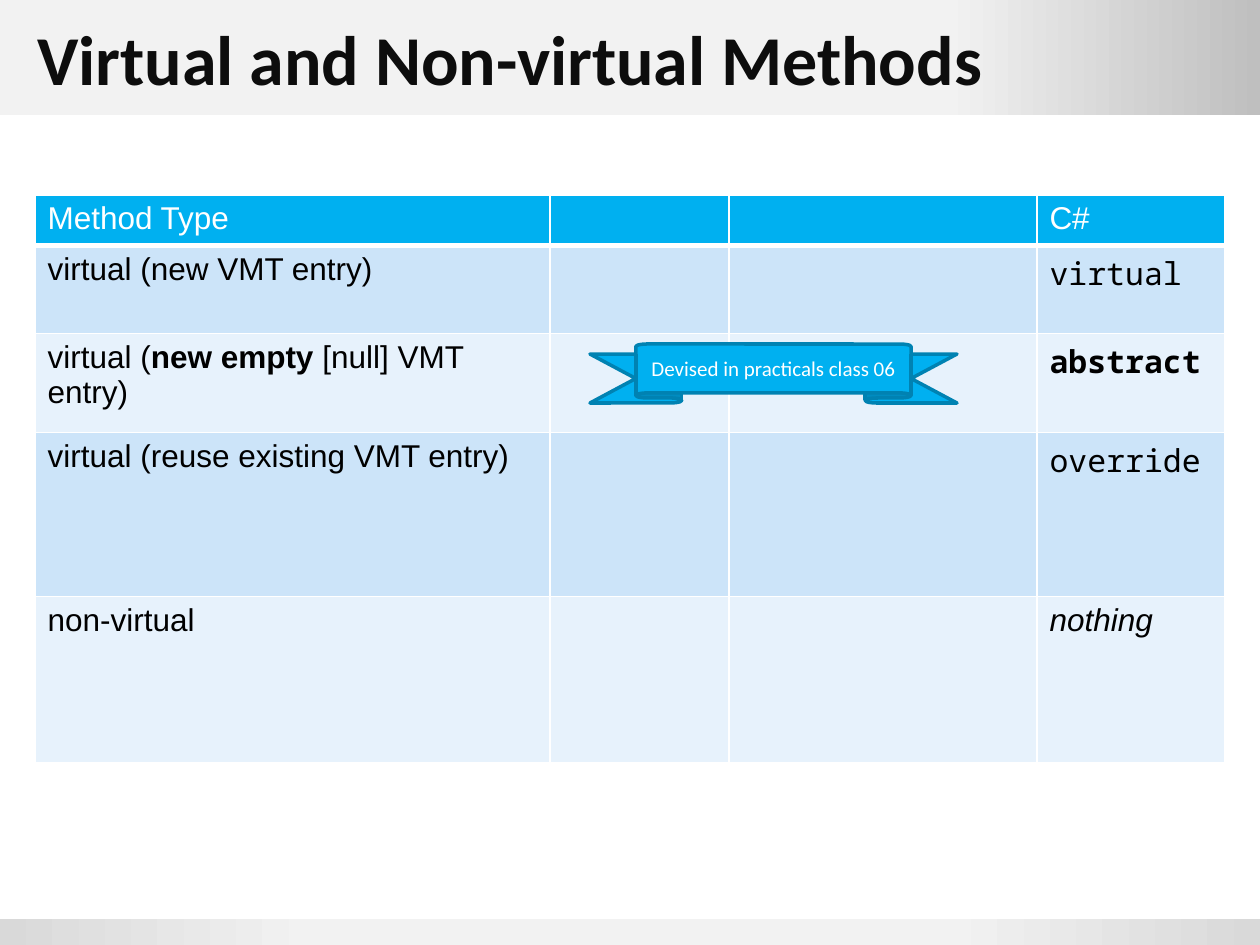
from lxml import etree
from pptx import Presentation, util as u
from pptx.dml.color import RGBColor
from pptx.enum import shapes, text
from pptx.oxml.ns import qn

SCALE = 914400 / 126  # EMU in one px
WIDE, HIGH = 1260, 945
HUES = {
    "white": "FFFFFF", "black": "000000", "ink": "0D0D0D",
    "pale": "F2F2F2", "silver": "D9D9D9", "gray": "BFBFBF",
    "blue": "00B0F0", "edge": "0082B2", "band": "CCE4F9", "light": "E7F2FC",
}
MONO = "Noto Sans Mono"


def px(n):
    return u.Emu(round(n * SCALE))


def rgb(name):
    return RGBColor.from_string(HUES[name])


def write(para, words, font="Arial", size=18, hue="black", bold=False, slant=False):
    """Add one formatted run to a paragraph."""
    run = para.add_run()
    run.text = words
    face = run.font
    face.name, face.size = font, u.Pt(size)
    face.bold, face.italic = bold, slant
    face.color.rgb = rgb(hue)


def paint(node, hue):
    """Append a solid fill to an XML node."""
    fill = etree.SubElement(node, qn("a:solidFill"))
    etree.SubElement(fill, qn("a:srgbClr"), val=HUES[hue])


class Deck:
    def __init__(self):
        self.show = Presentation()
        self.show.slide_width, self.show.slide_height = px(WIDE), px(HIGH)
        self.slide = self.show.slides.add_slide(self.show.slide_layouts[6])

    def shape(self, kind, box):
        item = self.slide.shapes.add_shape(kind, *map(px, box))
        item.shadow.inherit = False
        return item

    def bar(self, box, stops):
        """Rectangle with a left-to-right gradient of (percent, hue) stops."""
        item = self.shape(shapes.MSO_SHAPE.RECTANGLE, box)
        item.line.fill.background()
        item.fill.gradient()
        item.fill.gradient_angle = 0
        stop_list = item.fill._fill._gradFill.find(qn("a:gsLst"))
        for old in list(stop_list):
            stop_list.remove(old)
        for spot, hue in stops:
            stop = etree.SubElement(stop_list, qn("a:gs"), pos=str(spot * 1000))
            etree.SubElement(stop, qn("a:srgbClr"), val=HUES[hue])

    def title(self, box, words):
        frame = self.slide.shapes.add_textbox(*map(px, box)).text_frame
        frame.word_wrap = True
        frame.vertical_anchor = text.MSO_ANCHOR.MIDDLE
        write(frame.paragraphs[0], words, font="Calibri", size=40, hue="ink", bold=True)

    def table(self, left, top, cols, rows, cells):
        """Fill a banded grid; cells maps (row, column) to a list of runs."""
        box = map(px, (left, top, sum(cols), sum(rows)))
        grid = self.slide.shapes.add_table(len(rows), len(cols), *box).table
        for col, width in zip(grid.columns, cols):
            col.width = px(width)
        for row, height in zip(grid.rows, rows):
            row.height = px(height)
        for r in range(len(rows)):
            hue = "blue" if r == 0 else "band" if r % 2 else "light"
            for c in range(len(cols)):
                cell = grid.cell(r, c)
                cell.fill.solid()
                cell.fill.fore_color.rgb = rgb(hue)
                self.rim(cell, 3 if r == 0 else 1)
                for words, style in cells.get((r, c), []):
                    ink = "black" if r else "white"
                    write(cell.text_frame.paragraphs[0], words, hue=ink, **style)

    def rim(self, cell, base):
        """White cell borders, with a bottom border of base points."""
        props = cell._tc.get_or_add_tcPr()
        for i, side in enumerate("LRTB"):
            width = u.Pt(base if side == "B" else 1)
            line = etree.Element(qn("a:ln" + side), w=str(width))
            paint(line, "white")
            props.insert(i, line)

    def ribbon(self, box, words):
        item = self.shape(shapes.MSO_SHAPE.UP_RIBBON, box)
        item.adjustments[0], item.adjustments[1] = 0.17, 0.75
        item.fill.solid()
        item.fill.fore_color.rgb = rgb("blue")
        item.line.color.rgb = rgb("edge")
        item.line.width = u.Pt(2)
        frame = item.text_frame
        frame.word_wrap = True
        frame.margin_left = frame.margin_right = px(4)
        frame.vertical_anchor = text.MSO_ANCHOR.MIDDLE
        para = frame.paragraphs[0]
        para.alignment = text.PP_ALIGN.CENTER
        write(para, words, font="Calibri", size=12, hue="white")


def main():
    deck = Deck()

    # Header and footer bars
    deck.bar((0, 0, WIDE, 115), [(75, "pale"), (100, "gray")])
    deck.bar((0, 919, WIDE, 26),
             [(0, "silver"), (25, "pale"), (75, "pale"), (100, "silver")])
    deck.title((25, 0, 1211, 115), "Virtual and Non-virtual Methods")

    # Method table: the two middle columns stay empty
    kinds = [
        [("Method Type", {})],
        [("virtual (new VMT entry)", {})],
        [("virtual (", {}), ("new empty ", {"bold": True}), ("[null] VMT entry)", {})],
        [("virtual (reuse existing VMT entry)", {})],
        [("non-virtual", {})],
    ]
    words = [
        [("C#", {})],
        [("virtual", {"font": MONO})],
        [("abstract", {"font": MONO, "bold": True})],
        [("override", {"font": MONO})],
        [("nothing", {"slant": True})],
    ]
    cells = {(r, c): runs for c, col in ((0, kinds), (3, words))
             for r, runs in enumerate(col)}
    deck.table(35, 195, [515, 179, 308, 188], [50, 88, 99, 164, 166], cells)

    # Note over the table
    deck.ribbon((590, 344, 367, 59), "Devised in practicals class 06")

    deck.show.save("out.pptx")


if __name__ == "__main__":
    main()
